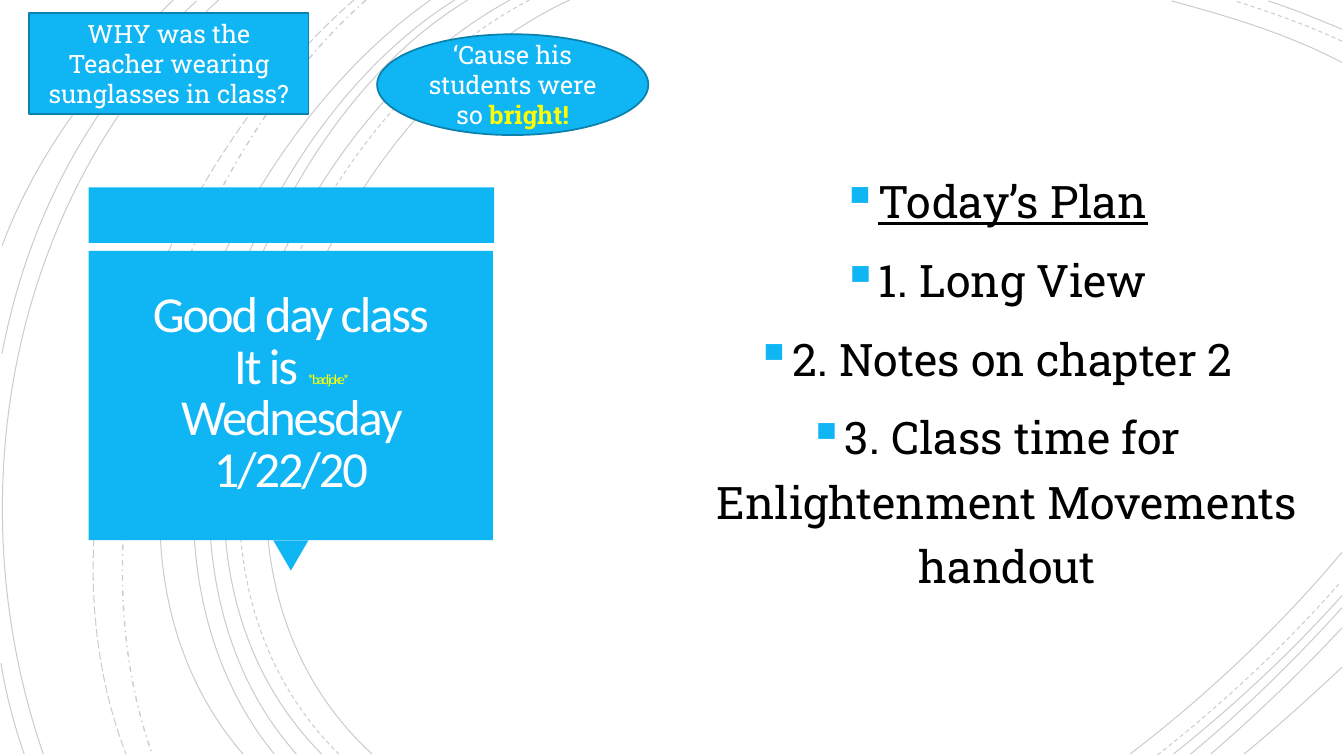
"""Build the daily class plan slide with a greeting, a joke and the agenda."""
from lxml import etree
from pptx import Presentation
from pptx.dml.color import RGBColor
from pptx.enum.dml import MSO_LINE
from pptx.enum.shapes import MSO_SHAPE
from pptx.enum.text import MSO_ANCHOR, PP_ALIGN
from pptx.oxml.ns import qn
from pptx.util import Inches, Pt

RECT, OVAL, TRIANGLE = MSO_SHAPE.RECTANGLE, MSO_SHAPE.OVAL, MSO_SHAPE.ISOSCELES_TRIANGLE
SOLID, DASH, LONG_DASH, DASH_DOT = MSO_LINE.SOLID, MSO_LINE.DASH, MSO_LINE.LONG_DASH, MSO_LINE.DASH_DOT
CENTER, MIDDLE = PP_ALIGN.CENTER, MSO_ANCHOR.MIDDLE

THEME = {
    "blue": RGBColor.from_string("10B6F4"),
    "edge": RGBColor.from_string("0B81AD"),
    "black": RGBColor.from_string("000000"),
    "white": RGBColor.from_string("FFFFFF"),
    "title": RGBColor.from_string("FFFEFF"),
    "yellow": RGBColor.from_string("FFFF00"),
    "title_font": "Calibri", "body_font": "Roboto Slab",
    "title_size": Pt(36), "aside_size": Pt(9.9), "plan_size": Pt(32), "joke_size": Pt(18),
}


def add_block(kind, box, edge=None):
    """Add a blue preset shape, outlined when an edge colour is given."""
    sp = s.shapes.add_shape(kind, *map(Inches, box))
    sp.shadow.inherit = False
    sp.fill.solid()
    sp.fill.fore_color.rgb = THEME["blue"]
    if edge is None:
        sp.line.fill.background()
    else:
        sp.line.color.rgb = edge
        sp.line.width = Pt(1.25)
    return sp


def write(sp, paragraphs, para_format, inset=None):
    """Fill a shape with centred paragraphs made of (text, colour, font format) runs."""
    tf = sp.text_frame
    tf.word_wrap = True
    tf.vertical_anchor = MIDDLE
    if inset is not None:
        for side in ("left", "right", "top", "bottom"):
            setattr(tf, f"margin_{side}", Inches(inset))
    for i, runs in enumerate(paragraphs):
        p = tf.add_paragraph() if i else tf.paragraphs[0]
        for name, value in {"alignment": CENTER, **para_format}.items():
            setattr(p, name, value)
        for j, (text, color, font_format) in enumerate(runs):
            for k, line in enumerate(text.split("\n")):
                if k:
                    p.add_line_break()
                r = p.add_run()
                r.text = line
                r.font.color.rgb = color
                for name, value in font_format.items():
                    setattr(r.font, name, value)
    return tf


prs = Presentation()
prs.slide_width, prs.slide_height = Inches(13.33), Inches(7.5)
s = prs.slides.add_slide(prs.slide_layouts[6])

arcs = [
    (SOLID, (5.65, 0), (3.15, 1.15), (1.43, 5.4), (3.69, 7.48)),
    (SOLID, (13.31, 0.62), (12.78, 0.34), (12.18, 0.16), (11.62, 0.01)),
    (SOLID, (11.21, 7.48), (11.97, 6.9), (12.69, 6.22), (13.31, 5.48)),
    (DASH, (5.25, 0), (2.85, 1.25), (1.23, 5.37), (3.36, 7.48)),
    (DASH, (13.31, 0.41), (12.97, 0.25), (12.6, 0.12), (12.25, 0.01)),
    (DASH, (11.48, 7.49), (12.13, 6.98), (12.75, 6.4), (13.3, 5.77)),
    (SOLID, (5.06, 0), (2.7, 1.27), (1.1, 5.37), (3.19, 7.48)),
    (SOLID, (13.31, 0.29), (13.07, 0.19), (12.83, 0.09), (12.58, 0.01)),
    (SOLID, (11.64, 7.48), (12.23, 7.01), (12.8, 6.48), (13.31, 5.91)),
    (SOLID, (4.64, 0), (2.44, 1.33), (1.1, 5.41), (2.94, 7.48)),
    (SOLID, (11.81, 7.48), (12.34, 7.04), (12.84, 6.55), (13.31, 6.03)),
    (SOLID, (4.51, 0), (2.31, 1.38), (0.97, 5.33), (2.72, 7.48)),
    (SOLID, (12.01, 7.48), (12.46, 7.09), (12.9, 6.67), (13.31, 6.23)),
    (SOLID, (4.27, 0), (2.17, 1.47), (0.53, 5.29), (2.41, 7.48)),
    (SOLID, (12.34, 7.48), (12.67, 7.21), (12.99, 6.92), (13.31, 6.62)),
    (DASH_DOT, (3.63, 0), (1.76, 1.66), (0.65, 5.09), (1.51, 7.48)),
    (LONG_DASH, (3.51, 0), (1.57, 1.69), (0.29, 4.99), (1.25, 7.48)),
    (SOLID, (2.17, 0), (0.11, 1.85), (-0.46, 4.9), (0.43, 7.48)),
    (SOLID, (1.95, 0.01), (0.92, 0.96), (0.28, 2.14), (0.02, 3.51)),
    (SOLID, (0.01, 6.58), (0.06, 6.89), (0.14, 7.19), (0.24, 7.48)),
    (SOLID, (1.72, 0), (1, 0.69), (0.37, 1.5), (0.02, 2.44)),
]
for dash, *points in arcs:
    start, *controls = [(Inches(x), Inches(y)) for x, y in points]
    builder = s.shapes.build_freeform(*start)
    builder.add_line_segments(controls, close=False)
    sp = builder.convert_to_shape()
    sp.shadow.inherit = False
    sp.fill.background()
    sp.line.color.rgb = THEME["black"]
    sp.line.width = Pt(1 if dash == DASH_DOT else 0.75)
    sp.line.dash_style = dash
    ink = sp._element.spPr.find(qn("a:ln")).find(".//" + qn("a:srgbClr"))
    etree.SubElement(ink, qn("a:alpha"), val="20000")
    outline = sp._element.find(".//" + qn("a:path"))
    curve = etree.SubElement(outline, qn("a:cubicBezTo"))
    for segment in outline.findall(qn("a:lnTo")):
        curve.append(segment[0])
        outline.remove(segment)

add_block(RECT, (0.88, 1.86, 4.02, 0.55))
pointer = add_block(TRIANGLE, (2.71, 5.36, 0.35, 0.3))
pointer.rotation = 180
add_block(RECT, (0.88, 2.49, 4.01, 2.87))

title_font = {"name": THEME["title_font"], "size": THEME["title_size"]}
aside_font = {**title_font, "size": THEME["aside_size"]}
title = s.shapes.add_textbox(*map(Inches, (0.97, 2.57, 3.83, 2.69)))
tf = write(title, [[
    ("Good day class\nIt is ", THEME["title"], title_font),
    ("*bad joke* ", THEME["yellow"], aside_font),
    ("Wednesday 1/22/20", THEME["title"], title_font),
]], {"line_spacing": 0.85}, inset=0.25)
for r in tf.paragraphs[0].runs:
    r.font._element.set("spc", "-150")

plan_font = {"name": THEME["body_font"], "size": THEME["plan_size"]}
steps = ["1. Long View", "2. Notes on chapter 2",
         "3. Class time for Enlightenment Movements handout"]
plan = s.shapes.add_textbox(*map(Inches, (6.43, 0.88, 6.87, 5.74)))
tf = write(plan, [
    [("Today’s Plan", THEME["black"], {**plan_font, "underline": True})],
    *[[(step, THEME["black"], plan_font)] for step in steps],
], {"line_spacing": 1.2, "space_before": Pt(10)})
for p in tf.paragraphs:
    props = p._p.get_or_add_pPr()
    props.set("marL", str(Inches(0.25)))
    props.set("indent", str(Inches(-0.25)))
    bullet_color = etree.SubElement(props, qn("a:buClr"))
    etree.SubElement(bullet_color, qn("a:srgbClr"), val=str(THEME["blue"]))
    etree.SubElement(props, qn("a:buSzPct"), val="110000")
    etree.SubElement(props, qn("a:buChar"), char="▪")

joke_font = {"name": THEME["body_font"], "size": THEME["joke_size"]}
question = add_block(RECT, (0.29, 0.13, 2.77, 1), THEME["edge"])
write(question, [[("WHY was the Teacher wearing sunglasses in class?", THEME["white"], joke_font)]], {})
answer = add_block(OVAL, (3.74, 0.34, 2.69, 1), THEME["edge"])
write(answer, [[
    ("‘Cause his students were so ", THEME["white"], joke_font),
    ("bright!", THEME["yellow"], {**joke_font, "bold": True}),
]], {})

prs.save("out.pptx")
